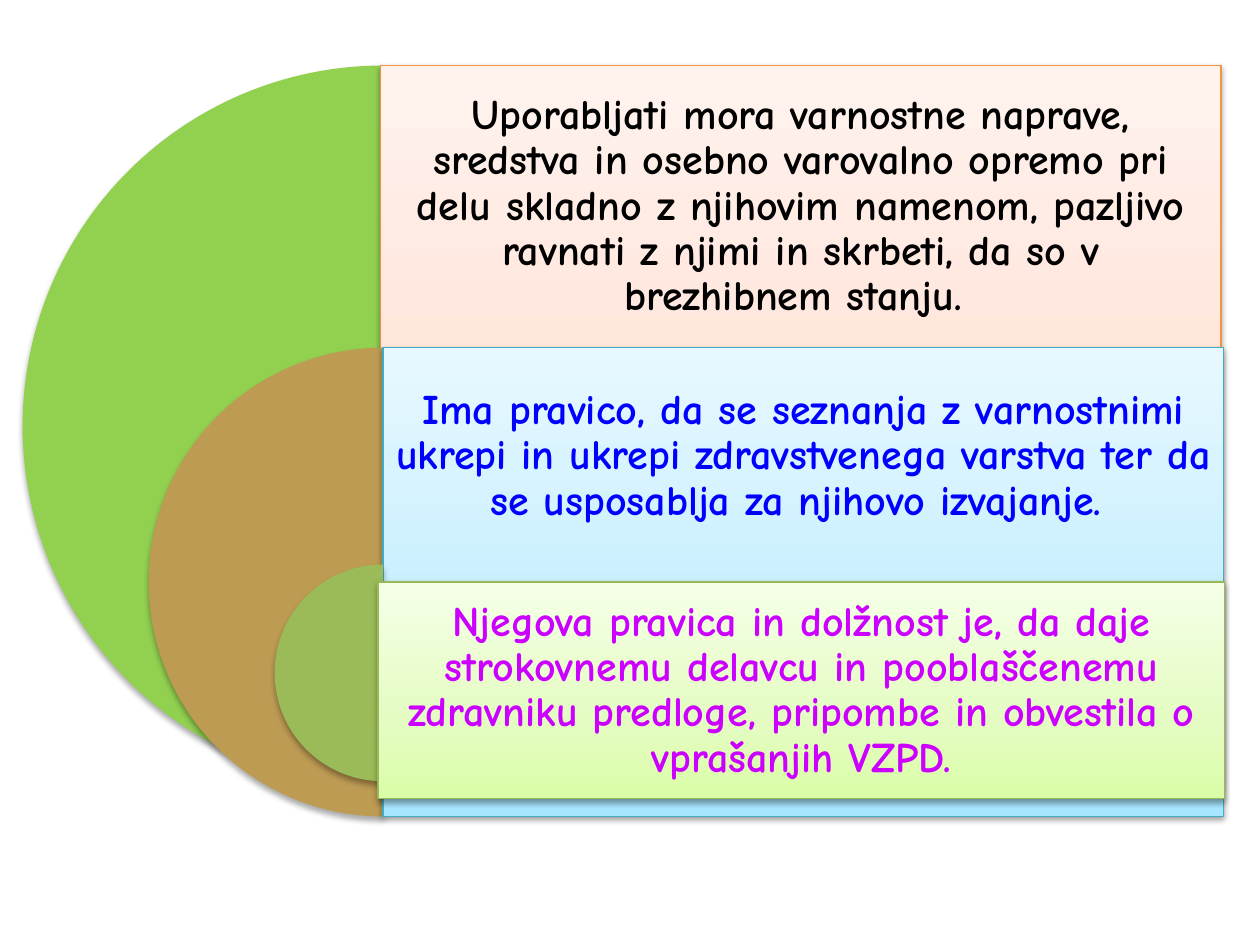
from lxml import etree
from pptx import Presentation, util as u
from pptx.dml.color import RGBColor
from pptx.enum import shapes, text
from pptx.oxml import ns

COLORS = {
    "lime": "92D050", "tan": "BD9B53", "olive": "9BBB59",
    "orange": "F69240", "teal": "46AAC5", "moss": "98B955",
    "black": "000000", "blue": "0000FF", "magenta": "CC00FF",
}
GRADIENTS = {
    "orange": ("FFD2BD", "FFDED0", "FFF2ED"),
    "teal": ("A7E6FF", "C1EDFF", "E7F8FF"),
    "moss": ("DAFDA7", "E4FCC2", "F5FFE7"),
}
STOPS = (0, 35, 100)
CENTER_X = 3.04
TEXT_H = 1.72

# diameter, pie top, pie colour, panel (left, top, width), panel colour,
# text top, text colour, wording
LEVELS = [
    (5.72, 0.52, "lime", (3.02, 0.52, 6.67), "orange", 0.78, "black",
     "Uporabljati mora varnostne naprave, sredstva in osebno varovalno opremo "
     "pri delu skladno z njihovim namenom, pazljivo ravnati z njimi in skrbeti, "
     "da so v brezhibnem stanju. "),
    (3.72, 2.76, "tan", (3.04, 2.76, 6.67), "teal", 2.76, "blue",
     "Ima pravico, da se seznanja z varnostnimi ukrepi in ukrepi zdravstvenega "
     "varstva ter da se usposablja za njihovo izvajanje. "),
    (1.72, 4.48, "olive", (3, 4.62, 6.72), "moss", 4.62, "magenta",
     "Njegova pravica in dolžnost je, da daje strokovnemu delavcu in "
     "pooblaščenemu zdravniku predloge, pripombe in obvestila o vprašanjih VZPD."),
]


def add_color(parent, color, alpha=None):
    """Append an srgbClr element, optionally with an opacity in percent."""
    clr = etree.SubElement(parent, ns.qn("a:srgbClr"), val=color)
    if alpha is not None:
        etree.SubElement(clr, ns.qn("a:alpha"), val=str(alpha * 1000))


def add_shadow(sp, alpha, blur, dist):
    """Give the shape a soft shadow that falls straight down."""
    sp.shadow.inherit = False
    effects = sp._element.spPr.find(ns.qn("a:effectLst"))
    shadow = etree.SubElement(
        effects, ns.qn("a:outerShdw"), blurRad=str(int(u.Pt(blur))),
        dist=str(int(u.Pt(dist))), dir="5400000", rotWithShape="0")
    add_color(shadow, COLORS["black"], alpha)


prs = Presentation()
prs.slide_width, prs.slide_height = u.Inches(10), u.Inches(7.5)
s = prs.slides.add_slide(prs.slide_layouts[6])

for size, pie_top, pie_color, panel_at, edge, text_top, ink, wording in LEVELS:
    pie = s.shapes.add_shape(
        shapes.MSO_SHAPE.PIE, u.Inches(CENTER_X - size / 2), u.Inches(pie_top),
        u.Inches(size), u.Inches(size))
    pie.adjustments[0], pie.adjustments[1] = 54, 162
    pie.fill.solid()
    pie.fill.fore_color.rgb = RGBColor.from_string(COLORS[pie_color])
    pie.line.fill.background()
    add_shadow(pie, 32, 3.5, 2.2)

    left, top, width = panel_at
    panel = s.shapes.add_shape(
        shapes.MSO_SHAPE.RECTANGLE, u.Inches(left), u.Inches(top),
        u.Inches(width), u.Inches(size))
    panel.fill.gradient()
    panel.fill.gradient_angle = 90
    stops = panel._element.spPr.find(".//" + ns.qn("a:gsLst"))
    for old in list(stops):
        stops.remove(old)
    for pos, color in zip(STOPS, GRADIENTS[edge]):
        add_color(etree.SubElement(stops, ns.qn("a:gs"), pos=str(pos * 1000)), color)
    panel.line.color.rgb = RGBColor.from_string(COLORS[edge])
    panel.line.width = u.Pt(0.75)
    add_shadow(panel, 38, 3.1, 1.6)

    box = s.shapes.add_textbox(
        u.Inches(left), u.Inches(text_top), u.Inches(width), u.Inches(TEXT_H))
    tf = box.text_frame
    tf.word_wrap = True
    tf.vertical_anchor = text.MSO_ANCHOR.MIDDLE
    tf.margin_left = tf.margin_right = u.Inches(0.1)
    tf.margin_top = tf.margin_bottom = u.Inches(0.1)
    p = tf.paragraphs[0]
    p.alignment = text.PP_ALIGN.CENTER
    p.line_spacing = 0.9
    r = p.add_run()
    r.text = wording
    r.font.name = "Comic Neue"
    r.font.size = u.Pt(24)
    r.font.bold = True
    r.font.color.rgb = RGBColor.from_string(COLORS[ink])

prs.save("out.pptx")
